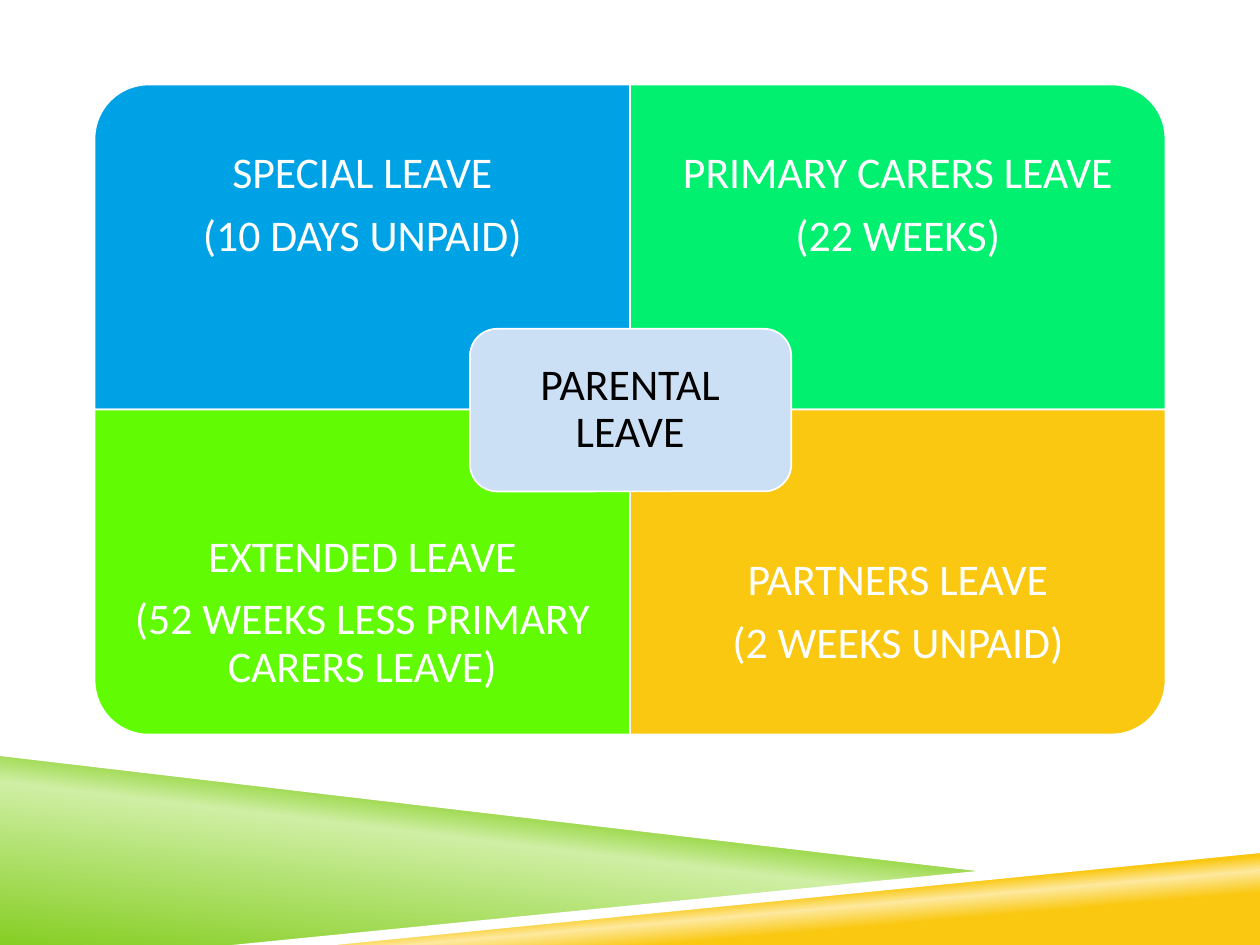
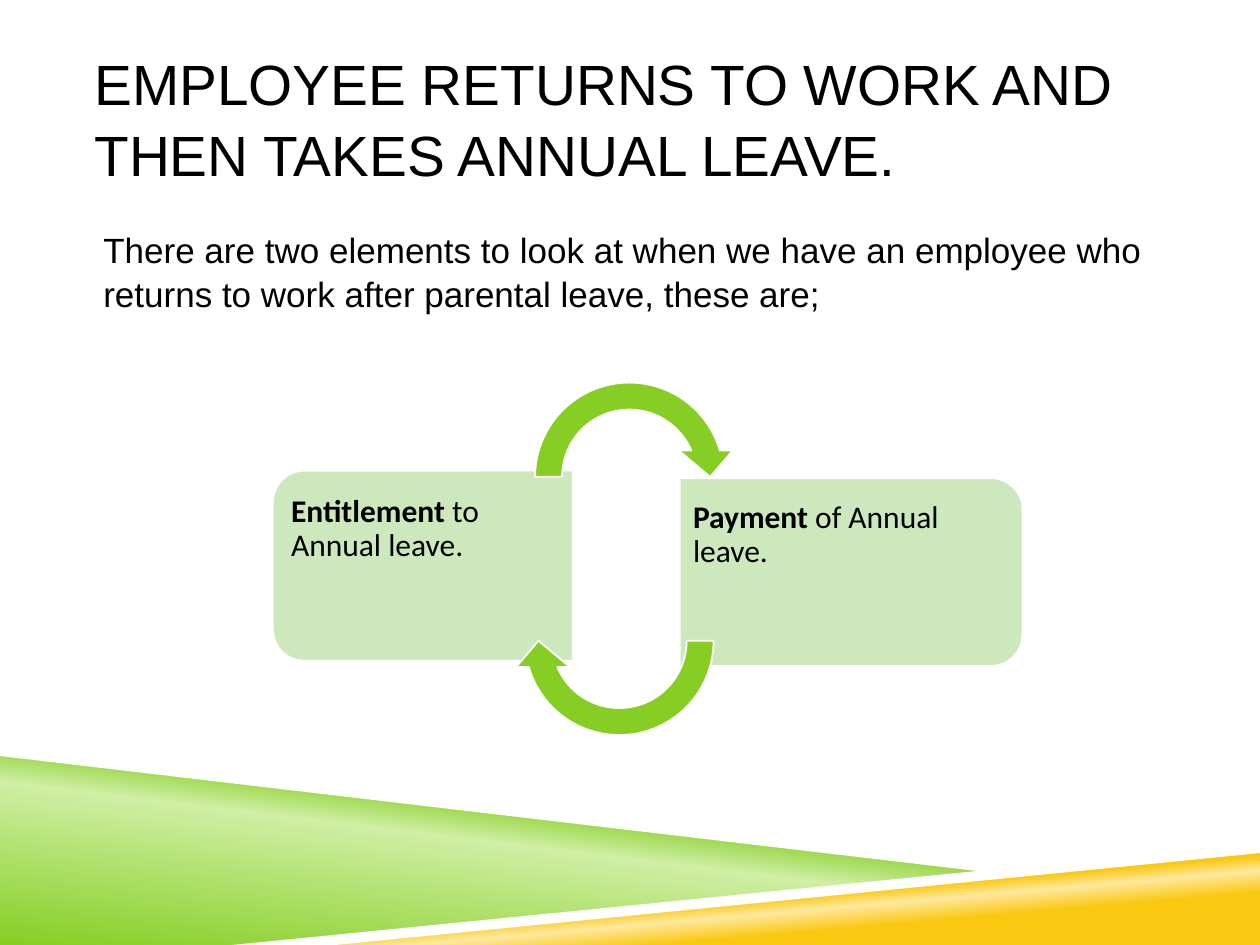
from copy import deepcopy

from pptx import Presentation, util as u
from pptx.dml.color import RGBColor
from pptx.enum import shapes, text

COLS, ROWS = 100, 75
GREEN, PALE_GREEN, GOLD, PALE_GOLD = "86CE24", "CFEFA4", "FAC810", "FDE99F"
WHITE, BLACK, CARD = "FFFFFF", "000000", "CEE8BE"
MSO = shapes.MSO_SHAPE
ANCHOR, ALIGN = text.MSO_ANCHOR, text.PP_ALIGN

HEADING = {"name": "Arial", "size": 32.4}
BODY = {"name": "Arial", "size": 20}
LABEL = {"name": "Calibri", "size": 25}
NOTE = {"name": "Calibri", "size": 18}


def rgb(value):
    return RGBColor.from_string(value)


class Deck:
    def __init__(self):
        self.prs = Presentation()
        self.prs.slide_width, self.prs.slide_height = u.Inches(10), u.Inches(7.5)
        self.s = None

    def x(self, cols):
        return round(self.prs.slide_width * cols / COLS)

    def y(self, rows):
        return round(self.prs.slide_height * rows / ROWS)

    def slide(self):
        self.s = self.prs.slides.add_slide(self.prs.slide_layouts[6])
        self.ribbons()

    def ribbons(self):
        self.outline([(0, 59.7), (79.2, 69.2), (20, 75), (0, 75)],
                     [(0, GREEN), (0.52, PALE_GREEN), (0.66, GREEN)], 83)
        self.outline([(19.8, 75), (100, 67.2), (100, 75)],
                     [(0.28, GOLD), (0.4, PALE_GOLD), (0.48, GOLD)], 95)
        self.outline([(0, 59.2), (0, 60), (79, 69.3), (83.2, 69)], [(0, WHITE)])
        self.outline([(100, 66.9), (18.4, 75), (26.6, 75), (100, 67.7)], [(0, WHITE)])

    def outline(self, points, stops, angle=0):
        start, *rest = [(self.x(c), self.y(r)) for c, r in points]
        builder = self.s.shapes.build_freeform(*start, scale=1.0)
        builder.add_line_segments(rest, close=True)
        sp = builder.convert_to_shape()
        sp.shadow.inherit = False
        sp.line.fill.background()
        if len(stops) == 1:
            self.paint(sp.fill, stops[0][1])
            return
        sp.fill.gradient()
        sp.fill.gradient_angle = angle
        first = sp.element.xpath(".//a:gs")[0]
        first.addnext(deepcopy(first))
        for stop, (position, color) in zip(sp.fill.gradient_stops, stops):
            stop.position, stop.color.rgb = position, rgb(color)

    def paint(self, fill, color):
        fill.solid()
        fill.fore_color.rgb = rgb(color)

    def shape(self, kind, box, color, rotation=0, adjust=()):
        left, top, width, height = box
        if rotation % 180:
            left, top = left + (width - height) / 2, top + (height - width) / 2
            width, height = height, width
        sp = self.s.shapes.add_shape(kind, self.x(left), self.y(top),
                                     self.x(width), self.y(height))
        sp.rotation = rotation
        sp.shadow.inherit = False
        self.paint(sp.fill, color)
        self.paint(sp.line.fill, WHITE)
        sp.line.width = u.Pt(1)
        for i, value in enumerate(adjust):
            sp.adjustments[i] = value

    def text(self, box, paragraphs, style, color=BLACK, insets=(0, 0.5, 0, 0.5),
             anchor=ANCHOR.TOP, align=ALIGN.LEFT, spacing=0.9, after=0.35):
        left, top, width, height = box
        tf = self.s.shapes.add_textbox(self.x(left), self.y(top),
                                       self.x(width), self.y(height)).text_frame
        frame = {"word_wrap": True, "vertical_anchor": anchor}
        sides = ("margin_left", "margin_top", "margin_right", "margin_bottom")
        frame.update(zip(sides, map(self.x, insets)))
        for key, value in frame.items():
            setattr(tf, key, value)
        for i, runs in enumerate(paragraphs):
            p = tf.add_paragraph() if i else tf.paragraphs[0]
            layout = {"alignment": align, "line_spacing": spacing,
                      "space_after": u.Pt(style["size"] * after)}
            for key, value in layout.items():
                setattr(p, key, value)
            for words, bold in runs:
                r = p.add_run()
                r.text = words
                for key, value in {**style, "size": u.Pt(style["size"]), "bold": bold}.items():
                    setattr(r.font, key, value)
                r.font.color.rgb = rgb(color)

    def label(self, box, lines, color, inset):
        self.text(box, [[(line, False)] for line in lines], LABEL, color,
                  (inset,) * 4, ANCHOR.MIDDLE, ALIGN.CENTER)


def leave_types(deck):
    deck.slide()
    left, top, width, height, label_height = 7.5, 6.7, 42.5, 25.8, 19.3
    quarters = [
        (0, 0, 270, "00A2E6", ["SPECIAL LEAVE", "(10 DAYS UNPAID)"]),
        (1, 0, 0, "02F06F", ["PRIMARY CARERS LEAVE", "(22 WEEKS)"]),
        (0, 1, 180, "61FB03", ["EXTENDED LEAVE", "(52 WEEKS LESS PRIMARY CARERS LEAVE)"]),
        (1, 1, 90, GOLD, ["PARTNERS LEAVE", "(2 WEEKS UNPAID)"]),
    ]
    for col, row, rotation, color, lines in quarters:
        x, y = left + col * width, top + row * height
        deck.shape(MSO.ROUND_1_RECTANGLE, (x, y, width, height), color, rotation)
        label_top = y + row * (height - label_height)
        deck.label((x, label_top, width, label_height), lines, WHITE, 1.9)
    deck.shape(MSO.ROUNDED_RECTANGLE, (37.3, 26.1, 25.5, 12.9), "CCE0F5")
    deck.label((37.9, 26.7, 24.2, 11.6), ["PARENTAL LEAVE"], BLACK, 1)


def return_to_work(deck):
    deck.slide()
    deck.text((7.5, 3, 85, 12.5),
              [[("EMPLOYEE RETURNS TO WORK AND THEN TAKES ANNUAL LEAVE.", False)]],
              HEADING, anchor=ANCHOR.MIDDLE, spacing=1.05, after=0)
    deck.text((7.5, 17.5, 85, 40.8),
              [[("There are two elements to look at when we have an employee who "
                 "returns to work after parental leave, these are;", False)]],
              BODY, insets=(0.7, 0.5, 0, 0.5), spacing=1.05, after=0)
    cards = [
        ((21.65, 37.35, 23.8, 15.1), 270, (22.4, 38.1, 23.1, 13.6), (0.7, 1.2, 1.1, 1.2),
         "Entitlement", " to Annual leave."),
        ((53.95, 37.95, 27.2, 14.9), 90, (53.9, 38.6, 26.5, 13.5), (1.1, 1.2, 0.7, 1.2),
         "Payment", " of Annual leave."),
    ]
    for box, rotation, text_box, insets, topic, rest in cards:
        deck.shape(MSO.ROUND_2_SAME_RECTANGLE, box, CARD, rotation, (1 / 6, 0))
        deck.text(text_box, [[(topic, True), (rest, False)]], NOTE, insets=insets)
    for x, y, rotation in [(41.4, 29.3, 0), (40.6, 42.3, 180)]:
        deck.shape(MSO.CIRCULAR_ARROW, (x, y, 17.1, 17.1), GREEN, rotation,
                   (1 / 8, 11.42, 204.58, 108, 1 / 8))


def main():
    deck = Deck()
    leave_types(deck)
    return_to_work(deck)
    deck.prs.save("out.pptx")


if __name__ == "__main__":
    main()
